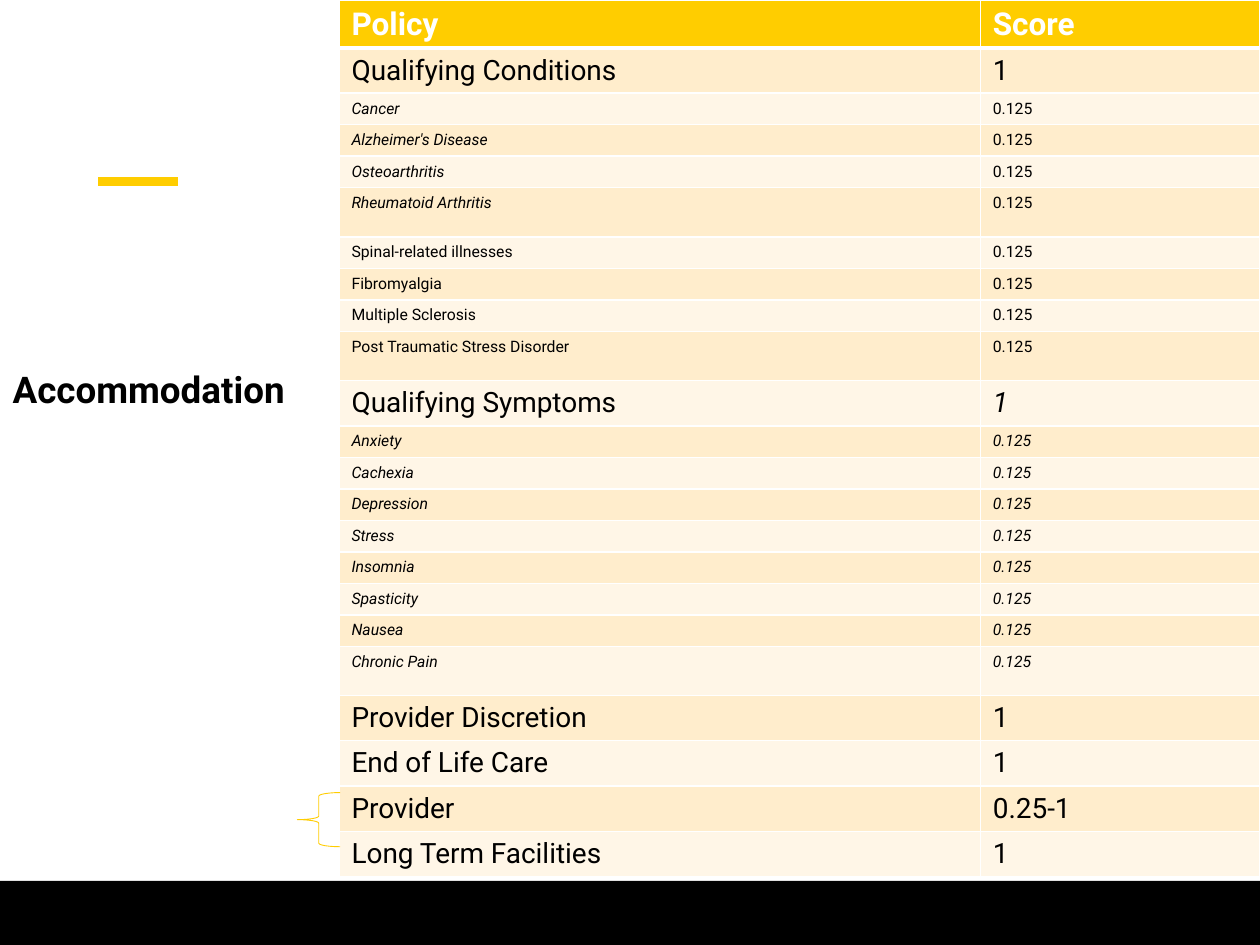
from lxml import etree
from pptx import Presentation
from pptx.dml.color import RGBColor
from pptx.enum.shapes import MSO_CONNECTOR, MSO_SHAPE
from pptx.enum.text import MSO_ANCHOR, PP_ALIGN
from pptx.oxml.ns import qn
from pptx.util import Inches, Pt

STRAIGHT = MSO_CONNECTOR.STRAIGHT
RECTANGLE = MSO_SHAPE.RECTANGLE
BRACE = MSO_SHAPE.RIGHT_BRACE
TOP = MSO_ANCHOR.TOP
LEFT = PP_ALIGN.LEFT

FONT = "Roboto"
TITLE_ONLY = 5
COLORS = {
    "accent": "FFCD00",
    "black": "000000",
    "white": "FFFFFF",
    "dark_band": "FFEDCC",
    "light_band": "FFF6E7",
}
ROW_HEIGHTS = {"header": 0.38, "main": 0.36, "detail": 0.25, "tall": 0.39}
TEXT_SIZES = {"header": 18, "main": 16, "detail": 9, "tall": 9}
COLUMN_WIDTHS = (5.09, 2.22)

# kind, policy, score, policy italic, score italic
ROWS = [
    ("header", "Policy", "Score", False, False),
    ("main", "Qualifying Conditions", "1", False, False),
    ("detail", "Cancer", "0.125", True, False),
    ("detail", "Alzheimer's Disease", "0.125", True, False),
    ("detail", "Osteoarthritis", "0.125", True, False),
    ("tall", "Rheumatoid Arthritis", "0.125", True, False),
    ("detail", "Spinal-related illnesses", "0.125", False, False),
    ("detail", "Fibromyalgia", "0.125", False, False),
    ("detail", "Multiple Sclerosis", "0.125", False, False),
    ("tall", "Post Traumatic Stress Disorder", "0.125", False, False),
    ("main", "Qualifying Symptoms", "1", False, True),
    ("detail", "Anxiety", "0.125", True, True),
    ("detail", "Cachexia", "0.125", True, True),
    ("detail", "Depression", "0.125", True, True),
    ("detail", "Stress", "0.125", True, True),
    ("detail", "Insomnia", "0.125", True, True),
    ("detail", "Spasticity", "0.125", True, True),
    ("detail", "Nausea", "0.125", True, True),
    ("tall", "Chronic Pain", "0.125", True, True),
    ("main", "Provider Discretion", "1", False, False),
    ("main", "End of Life Care", "1", False, False),
    ("main", "Provider", "0.25-1", False, False),
    ("main", "Long Term Facilities", "1", False, False),
]


def color(name):
    return RGBColor.from_string(COLORS[name])


def add_span(para, text, size, color_name, bold=False, italic=False):
    span = para.add_run()
    span.text = text
    span.font.name = FONT
    span.font.size = Pt(size)
    span.font.bold = bold
    span.font.italic = italic
    span.font.color.rgb = color(color_name)


def add_accent_line(page):
    line = page.shapes.add_connector(
        STRAIGHT, Inches(0.78), Inches(1.44), Inches(1.41), Inches(1.44))
    line.line.color.rgb = color("accent")
    line.line.width = Pt(5)
    etree.SubElement(line._element.spPr, qn("a:effectLst"))


def add_footer_bar(page):
    bar = page.shapes.add_shape(
        RECTANGLE, Inches(0), Inches(6.99), Inches(10), Inches(0.51))
    bar.shadow.inherit = False
    bar.fill.solid()
    bar.fill.fore_color.rgb = color("black")
    bar.line.fill.background()


def fill_title(page, text):
    title = page.shapes.title
    title.left, title.top = Inches(0), Inches(2.86)
    title.width, title.height = Inches(3.04), Inches(1.19)
    frame = title.text_frame
    frame.word_wrap = True
    frame.vertical_anchor = TOP
    para = frame.paragraphs[0]
    para.alignment = LEFT
    add_span(para, text, 21, "black", bold=True)


def set_borders(cell, widths):
    properties = cell._tc.get_or_add_tcPr()
    for index, (side, width) in enumerate(widths.items()):
        border = etree.Element(qn(f"a:ln{side}"), w=str(Pt(width)))
        fill = etree.SubElement(border, qn("a:solidFill"))
        etree.SubElement(fill, qn("a:srgbClr"), val=COLORS["white"])
        properties.insert(index, border)


def fill_cell(cell, row_index, kind, text, italic):
    header = kind == "header"
    band = "dark_band" if row_index % 2 else "light_band"
    cell.fill.solid()
    cell.fill.fore_color.rgb = color("accent" if header else band)
    cell.margin_left = cell.margin_right = Inches(0.1)
    cell.margin_top, cell.margin_bottom = Inches(0.05), Inches(0.03)
    cell.vertical_anchor = TOP
    add_span(cell.text_frame.paragraphs[0], text, TEXT_SIZES[kind],
             "white" if header else "black", bold=header, italic=italic)
    set_borders(cell, {"L": 1, "R": 1, "T": 3 if row_index == 1 else 1,
                       "B": 3 if header else 1})


def add_score_table(page):
    height = sum(ROW_HEIGHTS[row[0]] for row in ROWS)
    table = page.shapes.add_table(
        len(ROWS), len(COLUMN_WIDTHS), Inches(2.69), Inches(0),
        Inches(sum(COLUMN_WIDTHS)), Inches(height)).table
    for column, width in zip(table.columns, COLUMN_WIDTHS):
        column.width = Inches(width)
    for index, (kind, policy, score, *italics) in enumerate(ROWS):
        table.rows[index].height = Inches(ROW_HEIGHTS[kind])
        for column, (text, italic) in enumerate(zip((policy, score), italics)):
            fill_cell(table.cell(index, column), index, kind, text, italic)


def add_brace(page):
    brace = page.shapes.add_shape(
        BRACE, Inches(2.36), Inches(6.29), Inches(0.34), Inches(0.43))
    brace.rotation = 180
    brace.shadow.inherit = False
    brace.fill.background()
    brace.line.color.rgb = color("accent")
    brace.line.width = Pt(0.5)


def main():
    deck = Presentation()
    deck.slide_width, deck.slide_height = Inches(10), Inches(7.5)
    page = deck.slides.add_slide(deck.slide_layouts[TITLE_ONLY])
    add_accent_line(page)
    add_footer_bar(page)
    fill_title(page, "Accommodation")
    add_score_table(page)
    add_brace(page)
    deck.save("out.pptx")


if __name__ == "__main__":
    main()
